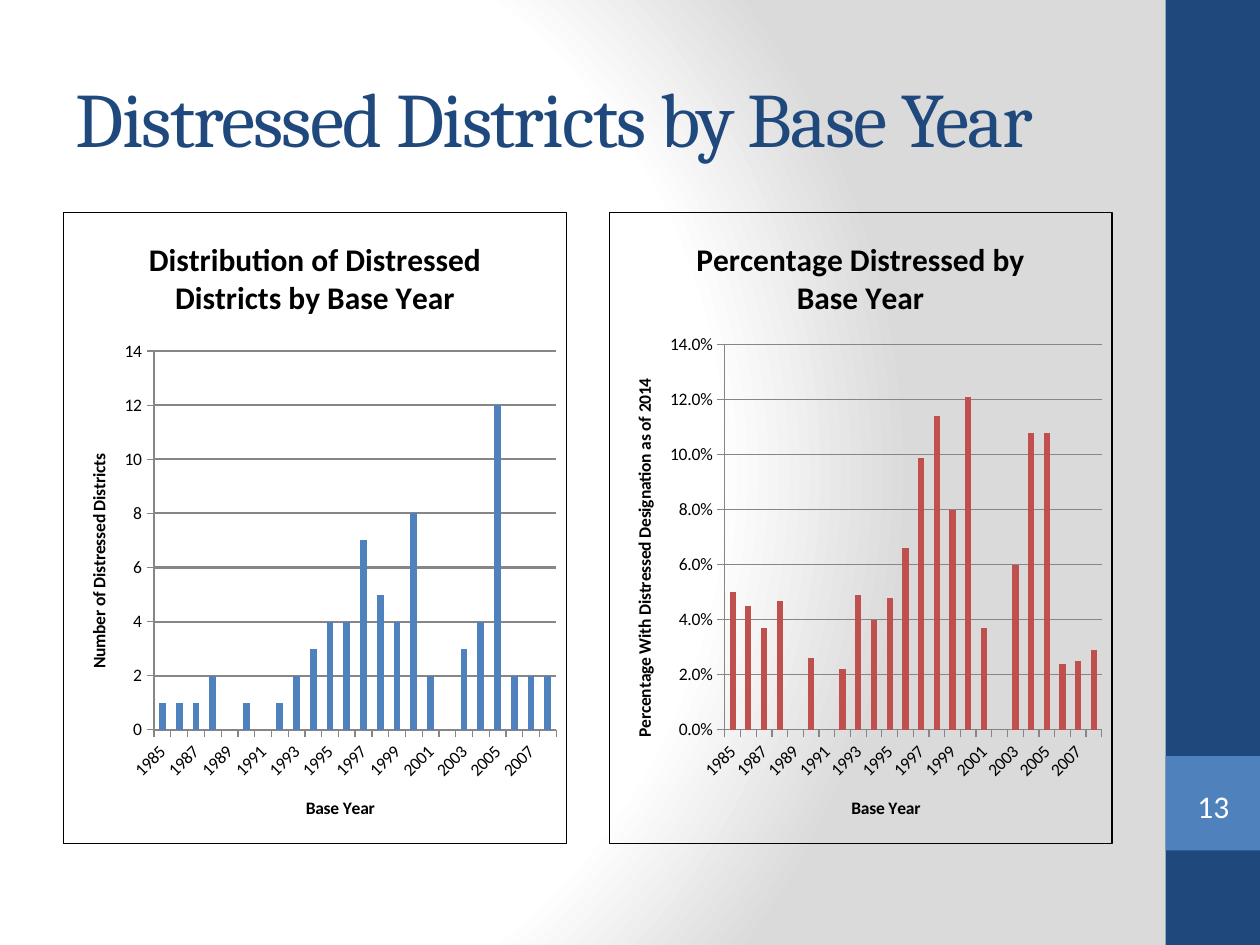
from dataclasses import dataclass

from lxml import etree
from pptx import Presentation
from pptx import util as u
from pptx.chart.data import CategoryChartData
from pptx.dml.color import RGBColor
from pptx.enum import chart as ch, shapes, text
from pptx.oxml import parse_xml
from pptx.oxml.ns import nsdecls, qn


@dataclass(frozen=True)
class Theme:
    navy: RGBColor = RGBColor(0x1F, 0x49, 0x7D)
    blue: RGBColor = RGBColor(0x4F, 0x81, 0xBD)
    red: RGBColor = RGBColor(0xC0, 0x50, 0x4D)
    white: RGBColor = RGBColor(0xFF, 0xFF, 0xFF)
    black: RGBColor = RGBColor(0, 0, 0)
    axis: RGBColor = RGBColor(0x86, 0x86, 0x86)
    shade: str = "DADADA"
    heading_font: str = "Cambria"
    body_font: str = "Calibri"
    title_size: u.Pt = u.Pt(44)
    chart_title_size: u.Pt = u.Pt(18)
    number_size: u.Pt = u.Pt(18)
    label_size: u.Pt = u.Pt(10)


theme = Theme()


def add_run(paragraph, wording, font, size, color, bold=False):
    run = paragraph.add_run()
    run.text = wording
    run.font.name, run.font.size, run.font.bold = font, size, bold
    run.font.color.rgb = color
    return run


def add_block(slide, kind, left, top, width, height, fill=None):
    block = slide.shapes.add_shape(
        kind, u.Inches(left), u.Inches(top), u.Inches(width), u.Inches(height))
    block.shadow.inherit = False
    block.line.fill.background()
    if fill is None:
        block.fill.background()
    else:
        block.fill.solid()
        block.fill.fore_color.rgb = fill
    return block


prs = Presentation()
prs.slide_width, prs.slide_height = u.Inches(10), u.Inches(7.5)
slide = prs.slides.add_slide(prs.slide_layouts[5])

# Background: white fading to grey on the right
backdrop = slide.background.fill
backdrop.gradient()
gradient = slide.background._cSld.find(".//" + qn("a:gradFill"))
gradient.getparent().replace(gradient, parse_xml(f"""
<a:gradFill {nsdecls('a')} rotWithShape="1">
  <a:gsLst>
    <a:gs pos="0"><a:srgbClr val="{theme.white}"/></a:gs>
    <a:gs pos="75000"><a:srgbClr val="{theme.white}"/></a:gs>
    <a:gs pos="100000"><a:srgbClr val="{theme.shade}"/></a:gs>
  </a:gsLst>
  <a:path path="circle"><a:fillToRect l="20000" t="50000" r="100000" b="50000"/></a:path>
</a:gradFill>"""))

# Side band
add_block(slide, shapes.MSO_SHAPE.RECTANGLE, 9.25, 0, 0.75, 7.5, theme.navy)
add_block(slide, shapes.MSO_SHAPE.RECTANGLE, 9.25, 6, 0.75, 0.75, theme.blue)

# Title
title = slide.shapes.title
title.left, title.top = u.Inches(0.5), u.Inches(0.3)
title.width, title.height = u.Inches(8.33), u.Inches(1.25)
title.text_frame.vertical_anchor = text.MSO_ANCHOR.MIDDLE
heading = title.text_frame.paragraphs[0]
heading.alignment = text.PP_ALIGN.LEFT
heading_run = add_run(heading, "Distressed Districts by Base Year",
                      theme.heading_font, theme.title_size, theme.navy)
heading_run.font._element.set("spc", "-100")

# Charts: left, title, value axis title, format, top, step, grid width, colour,
# plot area as fractions of the chart, values
base_years = [str(year) for year in range(1985, 2009)]
district_charts = [
    (0.5, "Distribution of Distressed Districts by Base Year",
     "Number of Distressed Districts", "General", 14, 2, 1.25, theme.blue,
     dict(x=0.18, y=0.22, w=0.8, h=0.6),
     [1, 1, 1, 2, 0, 1, 0, 1, 2, 3, 4, 4, 7, 5, 4, 8, 2, 0, 3, 4, 12, 2, 2, 2]),
    (4.83, "Percentage Distressed by Base Year",
     "Percentage With Distressed Designation as of 2014", "0.0%", 0.14, 0.02, 0.75,
     theme.red, dict(x=0.23, y=0.21, w=0.75, h=0.61),
     [0.05, 0.045, 0.037, 0.047, 0, 0.026, 0, 0.022, 0.049, 0.04, 0.048, 0.066,
      0.099, 0.114, 0.08, 0.121, 0.037, 0, 0.06, 0.108, 0.108, 0.024, 0.025, 0.029]),
]
for (left, chart_title, value_title, number_format, top_value, step,
     grid_width, color, plot_box, values) in district_charts:
    data = CategoryChartData(number_format=number_format)
    data.categories = base_years
    data.add_series("Series 1", values)
    chart = slide.shapes.add_chart(
        ch.XL_CHART_TYPE.COLUMN_CLUSTERED, u.Inches(left), u.Inches(1.68),
        u.Inches(4), u.Inches(5.02), data).chart
    chart.has_legend = False
    chart.font.name, chart.font.size = theme.body_font, theme.label_size
    chart.font.color.rgb = theme.black

    # Bars
    plot = chart.plots[0]
    plot.gap_width, plot.vary_by_categories = 150, False
    bars = plot.series[0].format.fill
    bars.solid()
    bars.fore_color.rgb = color

    # Axes
    years, amounts = chart.category_axis, chart.value_axis
    amounts.minimum_scale, amounts.maximum_scale = 0, top_value
    amounts.major_unit = step
    amounts.tick_labels.number_format = number_format
    amounts.tick_labels.number_format_is_linked = False
    amounts.has_major_gridlines = True
    gridline = amounts.major_gridlines.format.line
    gridline.color.rgb, gridline.width = theme.axis, u.Pt(grid_width)
    for axis in (years, amounts):
        axis.major_tick_mark = ch.XL_TICK_MARK.OUTSIDE
        axis.format.line.color.rgb = theme.axis
        axis.format.line.width = u.Pt(0.75)
    years.tick_labels.font.size = theme.label_size
    years._element.find(qn("c:txPr")).find(qn("a:bodyPr")).set("rot", "-2700000")
    skip = parse_xml(f'<c:tickLblSkip {nsdecls("c")} val="2"/>')
    years._element.find(qn("c:noMultiLvlLbl")).addprevious(skip)

    # Chart and axis titles
    for owner, wording, size in ((chart, chart_title, theme.chart_title_size),
                                 (years, "Base Year", theme.label_size),
                                 (amounts, value_title, theme.label_size)):
        owner.has_title = True
        label = owner.chart_title if owner is chart else owner.axis_title
        add_run(label.text_frame.paragraphs[0], wording, theme.body_font, size,
                theme.black, bold=True)
    chart.chart_title.include_in_layout = False
    amounts.axis_title.text_frame._txBody.find(qn("a:bodyPr")).set("rot", "-5400000")

    # Plot area position
    plot_area = chart._chartSpace.find(".//" + qn("c:plotArea"))
    for old_layout in plot_area.findall(qn("c:layout")):
        plot_area.remove(old_layout)
    layout = etree.Element(qn("c:layout"))
    manual = etree.SubElement(layout, qn("c:manualLayout"))
    settings = dict(layoutTarget="inner", xMode="edge", yMode="edge", **plot_box)
    for name, setting in settings.items():
        etree.SubElement(manual, qn(f"c:{name}")).set("val", str(setting))
    plot_area.insert(0, layout)

    # Clear chart area with a thin border
    chart._chartSpace.find(qn("c:chart")).addnext(parse_xml(
        f'<c:spPr {nsdecls("c", "a")}><a:noFill/><a:ln w="{u.Pt(0.75)}"><a:solidFill>'
        f'<a:srgbClr val="{theme.black}"/></a:solidFill></a:ln></c:spPr>'))

# Slide number
page = add_block(slide, shapes.MSO_SHAPE.DOUBLE_BRACKET, 9.33, 6.18, 0.6, 0.43)
page.adjustments[0] = 0.18
frame = page.text_frame
frame.margin_left = frame.margin_right = frame.margin_top = frame.margin_bottom = 0
frame.vertical_anchor = text.MSO_ANCHOR.MIDDLE
frame.paragraphs[0].alignment = text.PP_ALIGN.CENTER
add_run(frame.paragraphs[0], "13", theme.body_font, theme.number_size, theme.white)

prs.save("out.pptx")
